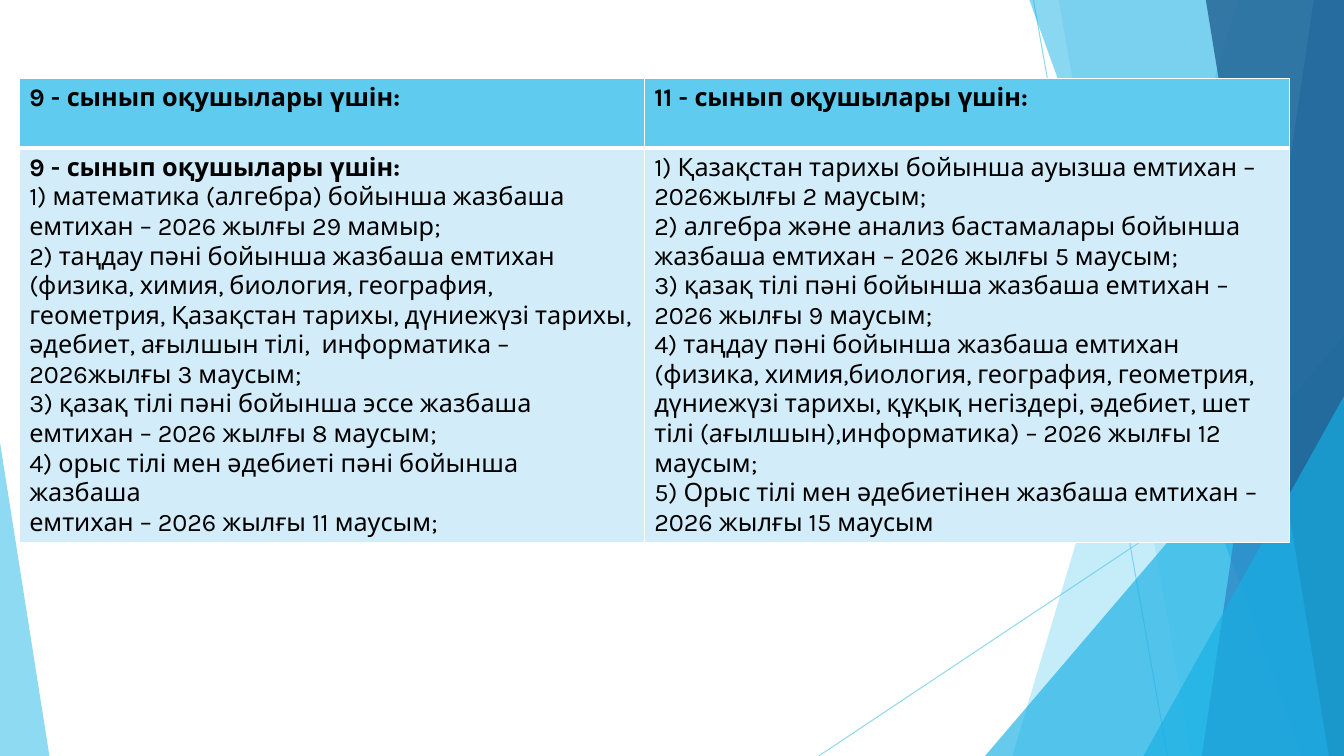
from lxml.etree import SubElement
from pptx import Presentation
from pptx.dml.color import RGBColor
from pptx.enum.shapes import MSO_CONNECTOR, MSO_SHAPE
from pptx.oxml import parse_xml
from pptx.oxml.ns import nsdecls, qn
from pptx.util import Inches, Pt

WIDTH, HEIGHT = 13.33, 7.5
SKY, BLUE, OCEAN, NAVY = "5FCBEF", "17B0E4", "2E83C3", "226292"
PALE, WHITE, BLACK = "D2ECF9", "FFFFFF", "000000"

FACETS = [
    ("band", 1.05, 3.29, SKY, 36),
    ("band", 2.83, 1.51, SKY, 20),
    ("corner", 3.56, 4.17, BLUE, 66),
    ("band", 3.12, 0.42, BLUE, 50),
    ("band", 0.3, 1.41, OCEAN, 70),
    ("band", 1.37, 0.15, NAVY, 80),
    ("corner", 1.99, 3.57, BLUE, 66),
]

HEADINGS = ["9 - сынып оқушылары үшін:", "11 - сынып оқушылары үшін:"]
EXAMS = [
    [
        HEADINGS[0],
        "1) математика (алгебра) бойынша жазбаша емтихан – 2026 жылғы 29 мамыр;",
        "2) таңдау пәні бойынша жазбаша емтихан (физика, химия, биология, география, "
        "геометрия, Қазақстан тарихы, дүниежүзі тарихы, әдебиет, ағылшын тілі,  "
        "информатика – 2026жылғы 3 маусым;",
        "3) қазақ тілі пәні бойынша эссе жазбаша",
        "емтихан – 2026 жылғы 8 маусым;",
        "4) орыс тілі мен әдебиеті пәні бойынша жазбаша",
        "емтихан – 2026 жылғы 11 маусым;",
    ],
    [
        "1) Қазақстан тарихы бойынша ауызша емтихан – 2026жылғы 2 маусым;",
        "2) алгебра және анализ бастамалары бойынша жазбаша емтихан – 2026 жылғы 5 маусым;",
        "3) қазақ тілі пәні бойынша жазбаша емтихан – 2026 жылғы 9 маусым;",
        "4) таңдау пәні бойынша жазбаша емтихан (физика, химия,биология, география, "
        "геометрия, дүниежүзі тарихы, құқық негіздері, әдебиет, шет тілі "
        "(ағылшын),информатика) – 2026 жылғы 12 маусым;",
        "5) Орыс тілі мен әдебиетінен жазбаша емтихан – 2026 жылғы 15 маусым",
    ],
]


def color(value):
    return RGBColor.from_string(value)


def set_opacity(properties, percent):
    for element in properties.iter(qn("a:srgbClr")):
        SubElement(element, qn("a:alpha")).set("val", str(percent * 1000))


def paint(shape, fill, opacity):
    shape.shadow.inherit = False
    shape.fill.solid()
    shape.fill.fore_color.rgb = color(fill)
    shape.line.fill.background()
    set_opacity(shape._element.spPr, opacity)


def add_thin_line(slide, start, end):
    points = [Inches(value) for value in (*start, *end)]
    connector = slide.shapes.add_connector(MSO_CONNECTOR.STRAIGHT, *points)
    connector.line.color.rgb = color(SKY)
    connector.line.width = Pt(0.75)
    properties = connector._element.spPr
    set_opacity(properties, 70)
    SubElement(properties, qn("a:effectLst"))


def add_band(slide, right, top, bottom, top_width, bottom_width):
    corners = [(right - top_width, top), (right, top), (right, bottom), (right - bottom_width, bottom)]
    points = [(Inches(x), Inches(y)) for x, y in corners]
    builder = slide.shapes.build_freeform(*points[0])
    builder.add_line_segments(points[1:], close=True)
    return builder.convert_to_shape()


def add_corner(slide, left, bottom, width, height, apex):
    shape = slide.shapes.add_shape(
        MSO_SHAPE.ISOSCELES_TRIANGLE, Inches(left), Inches(bottom - height), Inches(width), Inches(height)
    )
    shape.adjustments[0] = apex
    return shape


def add_backdrop(slide, left, top, width, height):
    right, bottom = left + width, top + height
    add_thin_line(slide, (right - 3.08, top), (right - 1.75, bottom))
    add_thin_line(slide, (right, top + 4.03), (right - 5.21, bottom))
    for kind, first, second, fill, opacity in FACETS:
        if kind == "band":
            shape = add_band(slide, right, top, bottom, first, second)
        else:
            shape = add_corner(slide, right - first, bottom, first, second, 1)
        paint(shape, fill, opacity)
    paint(add_corner(slide, left, bottom, 0.49, 3.11, 0), SKY, 70)


def set_borders(cell, widths):
    properties = cell._tc.get_or_add_tcPr()
    for index, (side, width) in enumerate(widths.items()):
        border = parse_xml(
            f'<a:ln{side} {nsdecls("a")} w="{Pt(width)}"><a:solidFill>'
            f'<a:srgbClr val="{WHITE}"/></a:solidFill></a:ln{side}>'
        )
        properties.insert(index, border)


def fill_cell(cell, lines, fill, widths):
    cell.fill.solid()
    cell.fill.fore_color.rgb = color(fill)
    set_borders(cell, widths)
    cell.text_frame.text = "\n".join(lines)
    for paragraph in cell.text_frame.paragraphs:
        for run in paragraph.runs:
            run.font.name = "Karla"
            run.font.size = Pt(18)
            run.font.bold = run.text in HEADINGS
            run.font.color.rgb = color(BLACK)


def add_exam_table(slide, left, top, width, height):
    frame = slide.shapes.add_table(2, 2, Inches(left), Inches(top), Inches(width), Inches(height))
    table = frame.table
    header_height, first_width = 0.69, 6.2
    table.rows[0].height = Inches(header_height)
    table.rows[1].height = Inches(height - header_height)
    table.columns[0].width = Inches(first_width)
    table.columns[1].width = Inches(width - first_width)
    for column, (heading, exams) in enumerate(zip(HEADINGS, EXAMS)):
        fill_cell(table.cell(0, column), [heading], SKY, {"L": 1, "R": 1, "T": 1, "B": 3})
        fill_cell(table.cell(1, column), exams, PALE, {"L": 1, "R": 1, "T": 3, "B": 1})


def main():
    presentation = Presentation()
    presentation.slide_width = Inches(WIDTH)
    presentation.slide_height = Inches(HEIGHT)
    slide = presentation.slides.add_slide(presentation.slide_layouts[6])
    add_backdrop(slide, 0, 0, WIDTH, HEIGHT)
    add_exam_table(slide, 0.19, 0.78, 12.6, 4.6)
    presentation.save("out.pptx")


if __name__ == "__main__":
    main()
